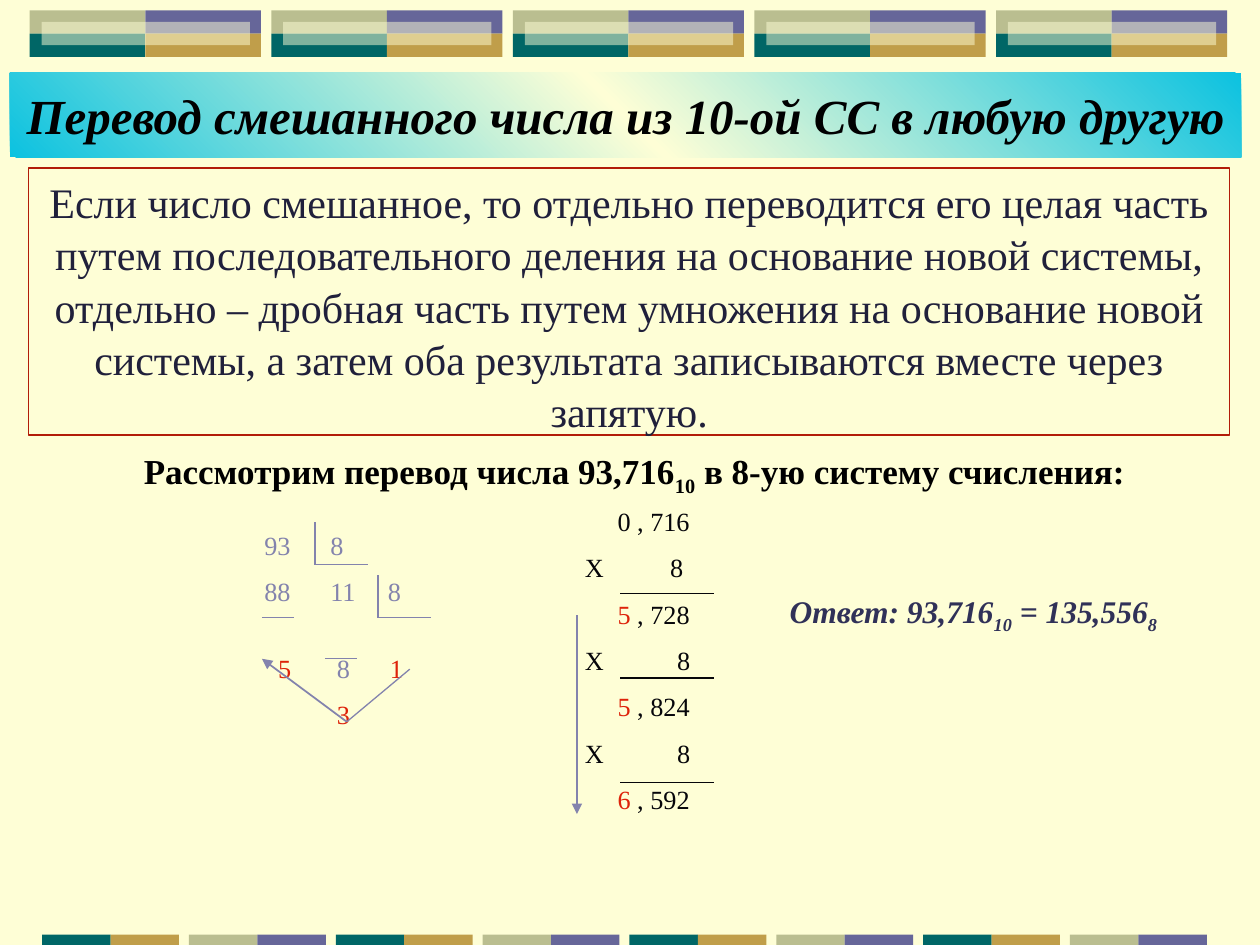
from copy import deepcopy

from pptx import Presentation
from pptx.dml.color import RGBColor
from pptx.enum.shapes import MSO_CONNECTOR, MSO_SHAPE
from pptx.enum.text import MSO_ANCHOR, MSO_AUTO_SIZE, PP_ALIGN
from pptx.oxml.ns import qn
from pptx.util import Cm, Pt
from lxml.etree import SubElement

rgb = RGBColor.from_string
CREAM, OLIVE, PURPLE, TEAL, GOLD = "FEFED6", "BABE90", "666699", "006666", "C09E4A"
RED, LILAC, INK = "DE230A", "8383AD", "06060A"
SUB = "sub"


def add_tile(left, top, width, height, color):
    tile = slide.shapes.add_shape(
        MSO_SHAPE.RECTANGLE, Cm(left), Cm(top), Cm(width), Cm(height))
    tile.shadow.inherit = False
    tile.fill.solid()
    tile.fill.fore_color.rgb = rgb(color)
    tile.line.fill.background()
    return tile


def write(frame, rows, size, color, align=PP_ALIGN.LEFT, bold=False, italic=False):
    """Each row is (tab stops in cm, space before in pt, runs); a run is (text, mark),
    where the mark is None, SUB or a colour."""
    frame.word_wrap = True
    frame.auto_size = MSO_AUTO_SIZE.NONE
    for number, (stops, space, runs) in enumerate(rows):
        paragraph = frame.add_paragraph() if number else frame.paragraphs[0]
        paragraph.alignment = align
        paragraph.space_before = Pt(space)
        if stops:
            tabs = SubElement(paragraph._p.get_or_add_pPr(), qn("a:tabLst"))
            for stop in stops:
                SubElement(tabs, qn("a:tab"), pos=str(Cm(stop)), algn="l")
        for text, mark in runs:
            run = paragraph.add_run()
            run.text = text
            font = run.font
            font.name, font.size, font.bold, font.italic = (
                "Times New Roman", Pt(size), bold, italic)
            font.color.rgb = rgb(color if mark in (None, SUB) else mark)
            if mark == SUB:
                run._r.get_or_add_rPr().set("baseline", "-25000")


prs = Presentation()
prs.slide_width, prs.slide_height = Cm(25.4), Cm(19.05)
slide = prs.slides.add_slide(prs.slide_layouts[5])
slide.background.fill.solid()
slide.background.fill.fore_color.rgb = rgb(CREAM)

# Ornament bands along the top and bottom edges
TILE_W, TILE_H = 2.33, 0.47
for block in range(5):
    left, top = 0.6 + 4.87 * block, 0.21
    for index, color in enumerate((OLIVE, PURPLE, TEAL, GOLD)):
        row, column = divmod(index, 2)
        add_tile(left + column * TILE_W, top + row * TILE_H, TILE_W, TILE_H, color)
    veil = add_tile(left + 0.24, top + 0.23, 4.2, TILE_H, CREAM)
    veil_color = veil._element.spPr.find(".//" + qn("a:srgbClr"))
    SubElement(veil_color, qn("a:alpha"), val="50000")

for pair in range(8):
    for half, color in enumerate((OLIVE, PURPLE) if pair % 2 else (TEAL, GOLD)):
        add_tile(0.85 + 2.96 * pair + 1.38 * half, 18.84, 1.38, 0.21, color)

# Title
title = slide.shapes.title
title.left, title.top, title.width, title.height = Cm(0.2), Cm(1.47), Cm(24.82), Cm(1.7)
title.fill.gradient()
title.fill.gradient_angle = 45
first_stop = title._element.spPr.find(".//" + qn("a:gs"))
first_stop.addnext(deepcopy(first_stop))
gradient = ((0, "0CC2E0"), (0.5, CREAM), (1, "0CC2E0"))
for stop, (position, color) in zip(title.fill.gradient_stops, gradient):
    stop.position = position
    stop.color.rgb = rgb(color)
title.text_frame.vertical_anchor = MSO_ANCHOR.MIDDLE
write(title.text_frame,
      [((), 0, [("Перевод смешанного числа из 10-ой СС в любую другую", None)])],
      28, "000000", PP_ALIGN.CENTER, bold=True, italic=True)

# Rule
rule = slide.shapes.add_shape(
    MSO_SHAPE.RECTANGLE, Cm(0.58), Cm(3.39), Cm(24.21), Cm(5.38))
rule.shadow.inherit = False
rule.fill.background()
rule.line.color.rgb = rgb("B21C08")
rule.line.width = Pt(0.75)
rule.text_frame.vertical_anchor = MSO_ANCHOR.TOP
write(rule.text_frame,
      [((), 0, [("Если число смешанное, то отдельно переводится его целая часть "
                 "путем последовательного деления на основание новой системы, "
                 "отдельно – дробная часть путем умножения на основание новой "
                 "системы, а затем оба результата записываются вместе через "
                 "запятую.", None)])],
      24, "20203B", PP_ALIGN.CENTER)
rule.text_frame.paragraphs[0].line_spacing = 1.04

# Example, both calculations and the answer
example = [((), 0, [("Рассмотрим перевод числа 93,716", None), ("10", SUB),
                    (" в 8-ую систему счисления:", None)])]

GAP = 8.5
multiplication = [((1.84,), 0, [("\t0 , 716", None)])]
for eight_at, whole, fraction in ((2.9, "5", "728"), (3.04, "5", "824"),
                                  (3.04, "6", "592")):
    multiplication += [
        ((1.18, eight_at), GAP, [("\tХ\t8", None)]),
        ((1.84,), GAP, [("\t", None), (whole, RED), (f" , {fraction}", None)]),
    ]

division = [
    ((1.33,), 0, [("93\t8", None)]),
    ((1.33, 2.49), GAP, [("88\t11\t8", None)]),
    ((0.28, 1.46, 2.53), 26, [("\t", None), ("5", RED), ("\t8\t", None), ("1", RED)]),
    ((1.46,), GAP, [("\t", None), ("3", RED)]),
]

answer = [((), 0, [("Ответ: 93,716", None), ("10", SUB),
                   (" = 135,556", None), ("8", SUB)])]

for (left, top, width, height), rows, size, color, align, bold, italic in (
    ((0.79, 8.94, 24, 1.12), example, 20, "000000", PP_ALIGN.CENTER, True, False),
    ((10.36, 10.06, 6.15, 6.6), multiplication, 15, INK, PP_ALIGN.LEFT, False, False),
    ((5.08, 10.54, 4.24, 3.76), division, 15, LILAC, PP_ALIGN.LEFT, False, False),
    ((15.67, 11.81, 8.66, 1.02), answer, 18, "303158", PP_ALIGN.LEFT, True, True),
):
    box = slide.shapes.add_textbox(Cm(left), Cm(top), Cm(width), Cm(height))
    write(box.text_frame, rows, size, color, align, bold, italic)

# Strokes of the calculations: x1, y1, x2, y2, colour, width, arrowhead
strokes = [(12.5, y, 14.4, y, INK, 0.75, False) for y in (11.96, 13.67, 15.77)]
for x, y in ((6.35, 11.38), (7.62, 12.45)):
    strokes += [(x, y - 0.85, x, y, LILAC, 0.75, False),
                (x, y, x + 1.07, y, LILAC, 0.75, False)]
strokes += [
    (11.63, 12.4, 11.63, 16.41, LILAC, 0.75, True),
    (5.28, 12.45, 5.92, 12.45, LILAC, 0.75, False),
    (6.55, 13.28, 7.19, 13.28, LILAC, 0.75, False),
    (8.26, 13.49, 6.99, 14.55, LILAC, 0.75, False),
    (6.99, 14.55, 5.28, 13.28, LILAC, 1, True),
]
for x1, y1, x2, y2, color, width, has_arrow in strokes:
    stroke = slide.shapes.add_connector(
        MSO_CONNECTOR.STRAIGHT, Cm(x1), Cm(y1), Cm(x2), Cm(y2))
    stroke.line.color.rgb = rgb(color)
    stroke.line.width = Pt(width)
    if has_arrow:
        SubElement(stroke.line._get_or_add_ln(), qn("a:tailEnd"), type="triangle")
    SubElement(stroke._element.spPr, qn("a:effectLst"))

prs.save("out.pptx")
